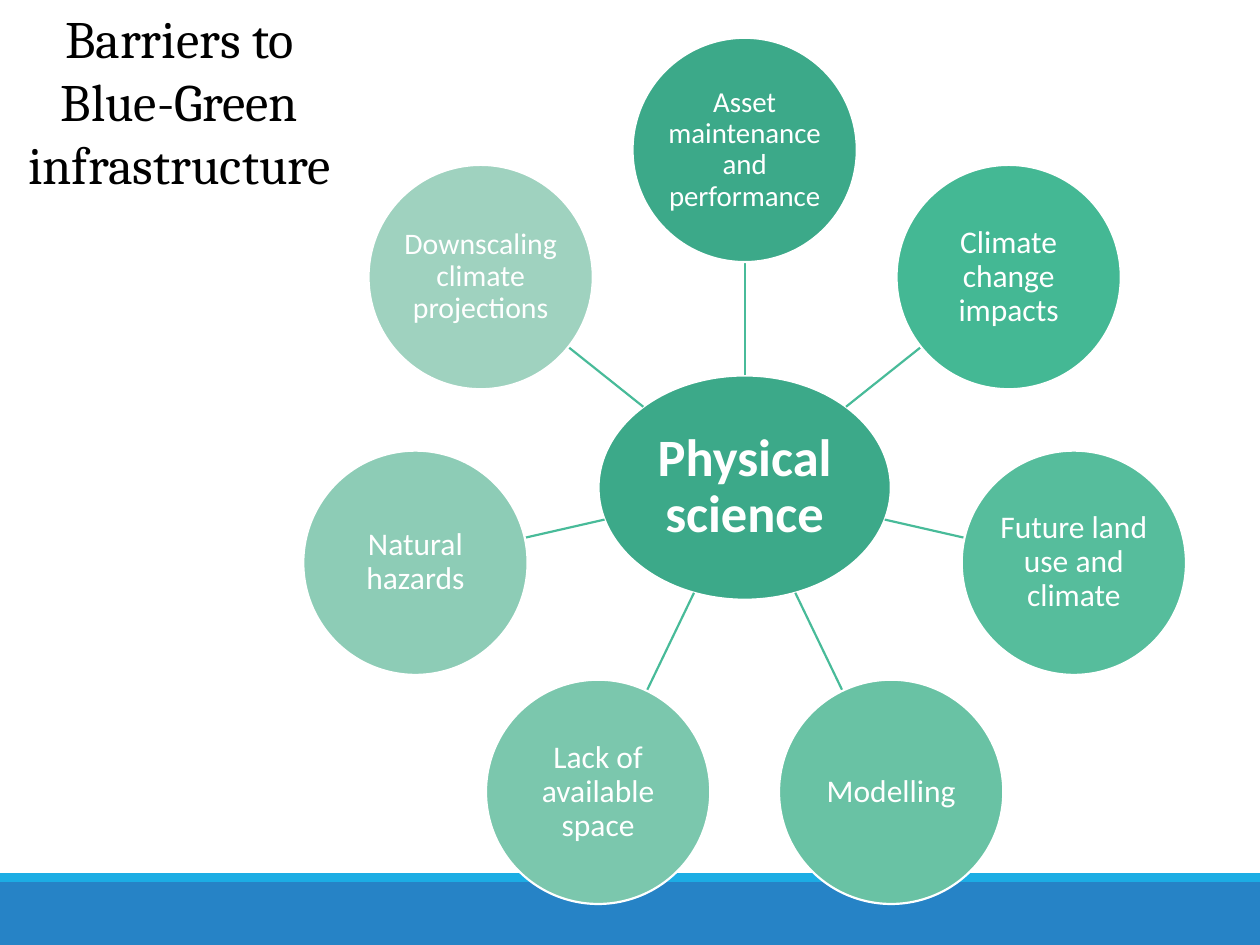
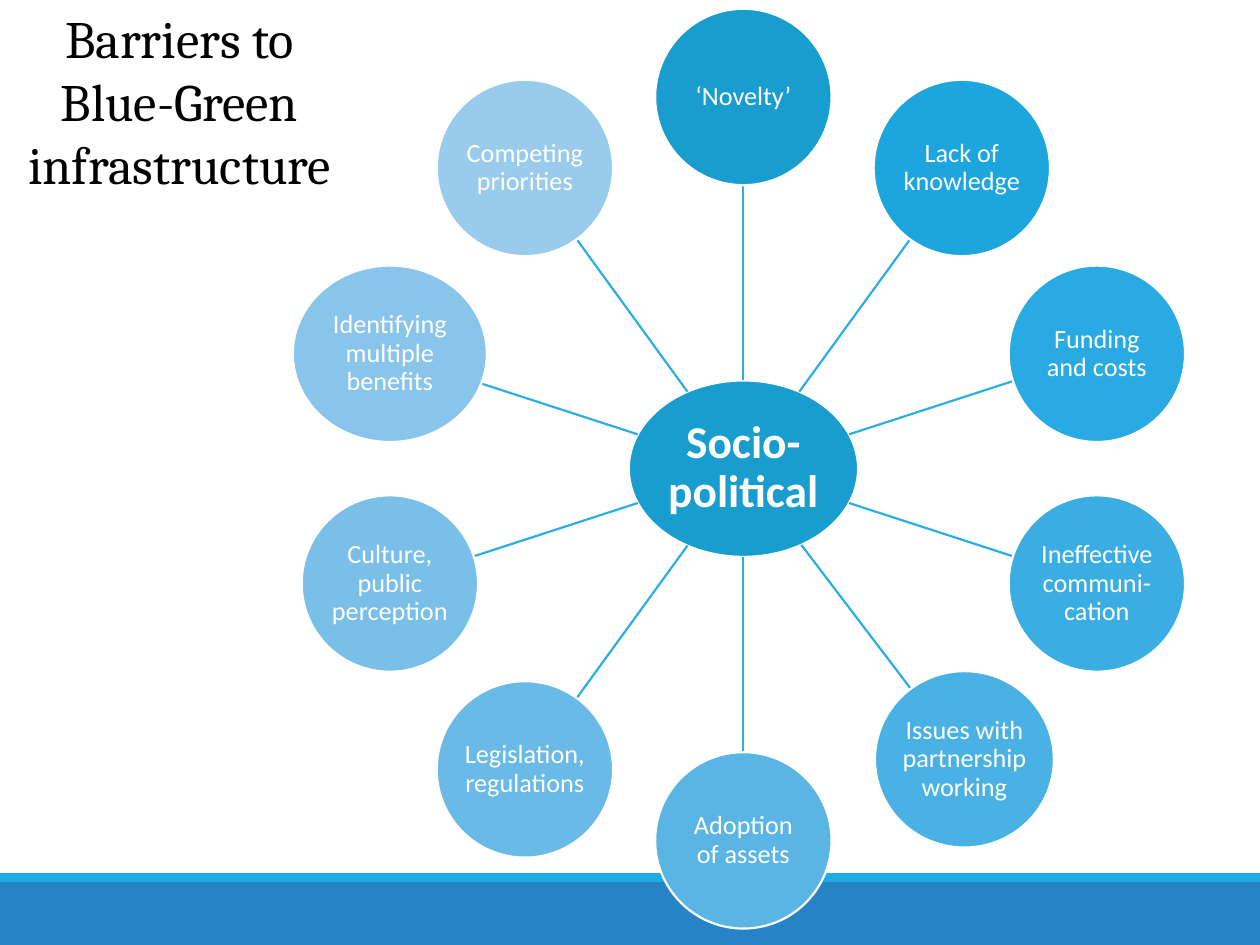
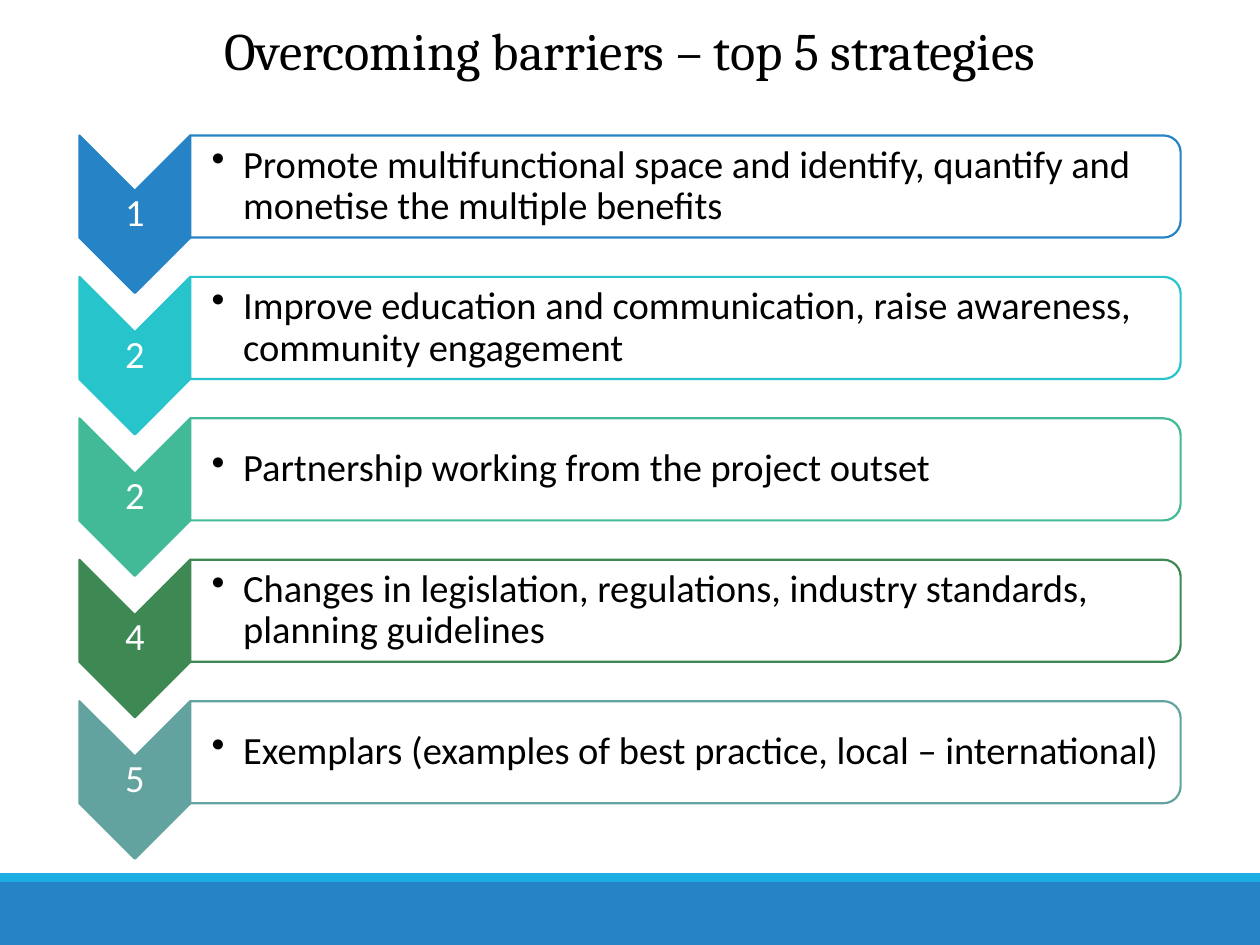
"""Build three slides on barriers to Blue-Green infrastructure and ways past them."""
import math
from dataclasses import dataclass

from lxml import etree
from pptx import Presentation
from pptx import util as u
from pptx.dml import color
from pptx.enum import shapes, text
from pptx.oxml import ns

WHITE, BLACK = "FFFFFF", "000000"
BAND_BLUE, STRIPE_BLUE = "2683C6", "1CADE4"
TITLE_FONT, BODY_FONT = "Cambria", "Calibri"
TITLE_SIZE, STRATEGY_SIZE = 30, 22
LINE_WIDTH = 1.25
BARRIERS_TITLE = "Barriers to Blue-Green infrastructure"


@dataclass
class Barrier:
    """One circle of a wheel, with any departure from the regular ring."""
    label: str
    fill: str
    size: float
    width: float
    shift: tuple = (0, 0)


@dataclass
class Wheel:
    """A hub with barriers spaced evenly around it."""
    hub: str
    hub_size: int
    hub_radii: tuple
    center: tuple
    ring: float
    spoke: str
    height: float
    barriers: list


PHYSICAL = Wheel(
    "Physical science", 30, (1.16, 0.89), (5.91, 3.87), 2.68, "48BB99", 1.78,
    [Barrier("Asset maintenance and performance", "3CA989", 16.5, 1.78),
     Barrier("Climate change impacts", "44B894", 18, 1.78),
     Barrier("Future land use and climate", "56BD9C", 18, 1.78),
     Barrier("Modelling", "69C2A4", 18, 1.78),
     Barrier("Lack of available space", "7BC7AD", 18, 1.78),
     Barrier("Natural hazards", "8DCCB6", 18, 1.78),
     Barrier("Downscaling climate projections", "9FD2BF", 17, 1.78)])

SOCIAL = Wheel(
    "Socio-political", 26, (0.91, 0.7), (5.9, 3.72), 2.95, "2AAEE4", 1.4,
    [Barrier("‘Novelty’", "199DCF", 15, 1.4),
     Barrier("Lack of knowledge", "1DA6DD", 15, 1.4),
     Barrier("Funding and costs", "29AAE2", 15, 1.4),
     Barrier("Ineffective communi-cation", "3AADE3", 15, 1.4),
     Barrier("Issues with partnership working", "4AB1E4", 15, 1.42, (0.02, -0.08)),
     Barrier("Adoption of assets", "5AB5E5", 15, 1.4),
     Barrier("Legislation, regulations", "6ABAE7", 15, 1.4),
     Barrier("Culture, public perception", "7ABFE8", 15, 1.4),
     Barrier("Identifying multiple benefits", "89C5EA", 15, 1.54),
     Barrier("Competing priorities", "99CBEC", 15, 1.4)])

STRATEGIES = [
    ("1", "2683C6", "Promote multifunctional space and identify, quantify and "
                    "monetise the multiple benefits"),
    ("2", "28C4CC", "Improve education and communication, raise awareness, "
                    "community engagement"),
    ("2", "42BA97", "Partnership working from the project outset"),
    ("4", "3E8853", "Changes in legislation, regulations, industry standards, "
                    "planning guidelines"),
    ("5", "62A39F", "Exemplars (examples of best practice, local – international)"),
]


def rgb(code):
    """Turn a hex string into a colour."""
    return color.RGBColor.from_string(code)


def centered(center, width, height):
    """Return left, top, width and height of a box around a center."""
    return [u.Inches(v) for v in (center[0] - width / 2, center[1] - height / 2, width, height)]


def add_figure(page, kind, place, fill, line=None):
    """Add a flat preset shape, outlined only when a line colour is given."""
    figure = page.shapes.add_shape(kind, *place)
    figure.shadow.inherit = False
    figure.fill.solid()
    figure.fill.fore_color.rgb = rgb(fill)
    if line:
        figure.line.color.rgb = rgb(line)
        figure.line.width = u.Pt(LINE_WIDTH)
    else:
        figure.line.fill.background()
    return figure


def write(box, words, size, tone, font=BODY_FONT, bold=False, align=text.PP_ALIGN.CENTER):
    """Write one paragraph into a shape and return the paragraph."""
    box.text_frame.word_wrap = True
    para = box.text_frame.paragraphs[0]
    para.alignment = align
    span = para.add_run()
    span.text = words
    span.font.name, span.font.size, span.font.bold = font, u.Pt(size), bold
    span.font.color.rgb = rgb(tone)
    return para


def set_label(box, words, size, tone=WHITE, inset=0.02, left=None, **style):
    """Write a tightly set label in the vertical middle of a shape."""
    frame = box.text_frame
    frame.vertical_anchor = text.MSO_ANCHOR.MIDDLE
    frame.margin_top = frame.margin_right = frame.margin_bottom = u.Inches(inset)
    frame.margin_left = u.Inches(inset if left is None else left)
    para = write(box, words, size, tone, **style)
    para.line_spacing = 0.9
    return para


def add_bullet(para, indent):
    """Give a paragraph a round bullet and a hanging indent."""
    props = para._p.get_or_add_pPr()
    props.set("marL", str(u.Inches(indent)))
    props.set("indent", str(-u.Inches(indent)))
    etree.SubElement(props, ns.qn("a:buChar")).set("char", "•")


def add_title(page, words, left, top, width, height):
    """Add a slide title."""
    box = page.shapes.add_textbox(*map(u.Inches, (left, top, width, height)))
    write(box, words, TITLE_SIZE, BLACK, TITLE_FONT)


def add_page(deck):
    """Add a blank slide with the two footer bands."""
    page = deck.slides.add_slide(deck.slide_layouts[6])
    for top, height, fill in ((7, 0.5, BAND_BLUE), (6.93, 0.07, STRIPE_BLUE)):
        place = map(u.Inches, (0, top, 10, height))
        add_figure(page, shapes.MSO_SHAPE.RECTANGLE, place, fill)
    return page


def rim_point(center, radii, target):
    """Find where the ray from an ellipse's center to a target leaves it."""
    dx, dy = target[0] - center[0], target[1] - center[1]
    reach = 1 / math.hypot(dx / radii[0], dy / radii[1])
    return center[0] + dx * reach, center[1] + dy * reach


def add_spoke(page, start, end, tone):
    """Draw a straight flat line between two points."""
    spoke = page.shapes.add_connector(
        shapes.MSO_CONNECTOR.STRAIGHT, *map(u.Inches, (*start, *end)))
    spoke.line.color.rgb = rgb(tone)
    spoke.line.width = u.Pt(LINE_WIDTH)
    etree.SubElement(spoke._element.spPr, ns.qn("a:effectLst"))


def add_disc(page, center, radii, fill, words, size, **style):
    """Add a labelled ellipse with a white rim."""
    place = centered(center, 2 * radii[0], 2 * radii[1])
    disc = add_figure(page, shapes.MSO_SHAPE.OVAL, place, fill, WHITE)
    set_label(disc, words, size, **style)


def add_wheel(page, wheel):
    """Add a hub and its barriers, clockwise from the top."""
    hub_fill = wheel.barriers[0].fill
    add_disc(page, wheel.center, wheel.hub_radii, hub_fill, wheel.hub, wheel.hub_size, bold=True)
    for index, barrier in enumerate(wheel.barriers):
        angle = math.tau * index / len(wheel.barriers)
        center = (wheel.center[0] + wheel.ring * math.sin(angle) + barrier.shift[0],
                  wheel.center[1] - wheel.ring * math.cos(angle) + barrier.shift[1])
        radii = barrier.width / 2, wheel.height / 2
        add_spoke(page, rim_point(wheel.center, wheel.hub_radii, center),
                  rim_point(center, radii, wheel.center), wheel.spoke)
        add_disc(page, center, radii, barrier.fill, barrier.label, barrier.size, inset=0.01)


def add_strategy(page, middle, number, tone, words):
    """Add a numbered chevron and its outlined strategy bar."""
    chevron_center, bar_center = (1.07, middle + 0.22), (5.44, middle)
    chevron = add_figure(page, shapes.MSO_SHAPE.CHEVRON,
                         centered(chevron_center, 1.25, 0.88), tone, tone)
    bar = add_figure(page, shapes.MSO_SHAPE.ROUND_2_SAME_RECTANGLE,
                     centered(bar_center, 0.81, 7.86), WHITE, tone)
    chevron.rotation = bar.rotation = 90
    number_box = page.shapes.add_textbox(*centered(chevron_center, 0.88, 0.38))
    set_label(number_box, number, STRATEGY_SIZE)
    words_box = page.shapes.add_textbox(*centered((5.42, middle), 7.82, 0.73))
    para = set_label(words_box, words, STRATEGY_SIZE, BLACK, left=0.17,
                     align=text.PP_ALIGN.LEFT)
    add_bullet(para, 0.25)


def main():
    """Build and save the deck."""
    deck = Presentation()
    deck.slide_width, deck.slide_height = u.Inches(10), u.Inches(7.5)
    for wheel in (PHYSICAL, SOCIAL):
        page = add_page(deck)
        add_wheel(page, wheel)
        add_title(page, BARRIERS_TITLE, 0, 0, 2.85, 1.62)

    page = add_page(deck)
    first, last = 1.48, 5.97
    step = (last - first) / (len(STRATEGIES) - 1)
    for index, strategy in enumerate(STRATEGIES):
        add_strategy(page, first + index * step, *strategy)
    add_title(page, "Overcoming barriers – top 5 strategies", 0, 0.09, 10, 0.61)
    deck.save("out.pptx")


if __name__ == "__main__":
    main()
